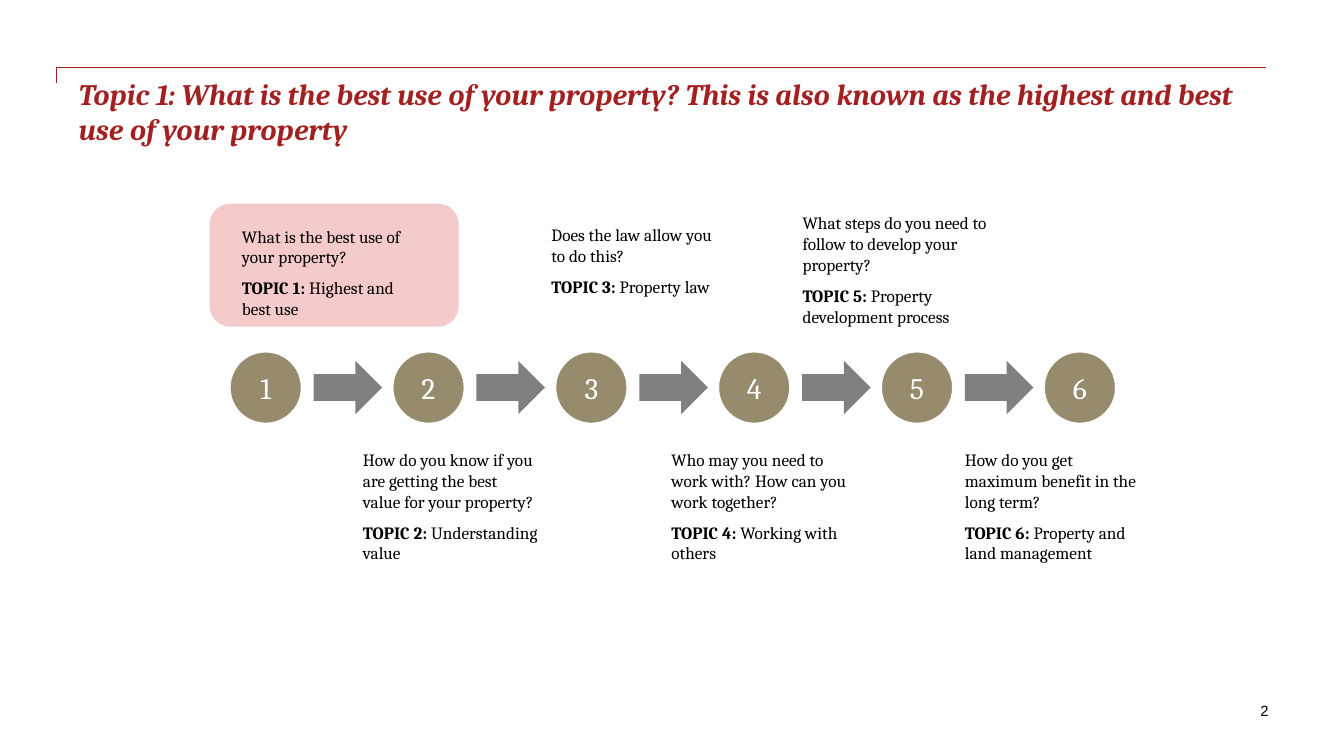
from lxml.etree import SubElement
from pptx import Presentation
from pptx.dml.color import RGBColor
from pptx.enum.shapes import MSO_SHAPE
from pptx.enum.text import MSO_ANCHOR, MSO_AUTO_SIZE, PP_ALIGN
from pptx.oxml.ns import qn
from pptx.util import Inches, Pt

COLORS = {
    "red": "A32020",
    "pink": "EA9696",
    "khaki": "968C6D",
    "gray": "808080",
    "white": "FFFFFF",
    "black": "000000",
}

TOPICS = [
    (2.4, 2.24, 1.74, 1.22, "What is the best use of your property?", "Highest and best use"),
    (3.6, 4.46, 1.74, 1.22, "How do you know if you are getting the best value for your property?",
     "Understanding value"),
    (5.47, 2.23, 1.74, 0.96, "Does the law allow you to do this?", "Property law"),
    (6.66, 4.46, 1.74, 1.22, "Who may you need to work with? How can you work together?",
     "Working with others"),
    (7.96, 2.11, 1.98, 1.22, "What steps do you need to follow to develop your property?",
     "Property development process"),
    (9.57, 4.46, 1.74, 1.22, "How do you get maximum benefit in the long term?",
     "Property and land management"),
]


def rgb(name):
    return RGBColor.from_string(COLORS[name])


def add_run(p, text, size=12.3, font="Cambria", color="black", bold=False, italic=False):
    r = p.add_run()
    r.text = text
    r.font.size = Pt(size)
    r.font.name = font
    r.font.color.rgb = rgb(color)
    r.font.bold = bold
    r.font.italic = italic


class Deck:
    """Holds the slide style and draws each kind of element."""

    def __init__(self, prs):
        self.s = prs.slides.add_slide(prs.slide_layouts[5])

    def frame(self, tf, inset=0.0, anchor=MSO_ANCHOR.TOP):
        tf.word_wrap = True
        tf.auto_size = MSO_AUTO_SIZE.NONE
        tf.vertical_anchor = anchor
        tf.margin_left = tf.margin_right = Inches(inset)
        tf.margin_top = tf.margin_bottom = Inches(inset / 2)
        return tf

    def title(self, text, x, y, w, h):
        sp = self.s.shapes.title
        sp.left, sp.top, sp.width, sp.height = map(Inches, (x, y, w, h))
        p = self.frame(sp.text_frame).paragraphs[0]
        p.alignment = PP_ALIGN.LEFT
        add_run(p, text, size=21.2, color="red", bold=True, italic=True)

    def bracket(self, points):
        start, *rest = [(Inches(x), Inches(y)) for x, y in points]
        builder = self.s.shapes.build_freeform(*start)
        builder.add_line_segments(rest, close=False)
        sp = builder.convert_to_shape()
        sp.shadow.inherit = False
        sp.fill.background()
        sp.line.color.rgb = rgb("red")
        sp.line.width = Pt(1)

    def shape(self, kind, x, y, w, h, fill, alpha=None, outline=False):
        sp = self.s.shapes.add_shape(kind, Inches(x), Inches(y), Inches(w), Inches(h))
        sp.shadow.inherit = False
        sp.fill.solid()
        sp.fill.fore_color.rgb = rgb(fill)
        if alpha:
            clr = sp._element.spPr.find(qn("a:solidFill")).find(qn("a:srgbClr"))
            SubElement(clr, qn("a:alpha"), val=str(alpha * 1000))
        if outline:
            sp.line.color.rgb = rgb(fill)
            sp.line.width = Pt(0.25)
        else:
            sp.line.fill.background()
        return sp

    def step(self, number, x, y, size):
        sp = self.shape(MSO_SHAPE.OVAL, x, y, size, size, "khaki", outline=True)
        p = self.frame(sp.text_frame, 0.1, MSO_ANCHOR.MIDDLE).paragraphs[0]
        p.alignment = PP_ALIGN.CENTER
        add_run(p, str(number), size=21.2, color="white")

    def textbox(self, x, y, w, h, inset=0.0, anchor=MSO_ANCHOR.TOP):
        sp = self.s.shapes.add_textbox(Inches(x), Inches(y), Inches(w), Inches(h))
        return self.frame(sp.text_frame, inset, anchor)

    def topic(self, number, x, y, w, h, question, name):
        tf = self.textbox(x, y, w, h)
        p = tf.paragraphs[0]
        p.space_after = Pt(7.5)
        add_run(p, question)
        p = tf.add_paragraph()
        p.space_after = Pt(7.5)
        add_run(p, f"TOPIC {number}: ", bold=True)
        add_run(p, name)

    def page_number(self, number, x, y, w, h):
        p = self.textbox(x, y, w, h, 0.1, MSO_ANCHOR.MIDDLE).paragraphs[0]
        p.alignment = PP_ALIGN.RIGHT
        add_run(p, str(number), size=10.6, font="Arial")


def main():
    prs = Presentation()
    prs.slide_width, prs.slide_height = Inches(13.33), Inches(7.5)
    deck = Deck(prs)
    deck.bracket([(0.56, 0.82), (0.56, 0.67), (12.56, 0.67)])
    deck.title("Topic 1: What is the best use of your property? "
               "This is also known as the highest and best use of your property",
               0.78, 0.75, 11.78, 1)
    deck.shape(MSO_SHAPE.ROUNDED_RECTANGLE, 2.08, 2.02, 2.47, 1.22, "pink", alpha=50)
    pitch = 9.69 / 6
    for i, topic in enumerate(TOPICS):
        deck.step(i + 1, 2.29 + i * pitch, 3.5, 0.69)
        deck.topic(i + 1, *topic)
        if i < len(TOPICS) - 1:
            deck.shape(MSO_SHAPE.RIGHT_ARROW, 3.11 + i * pitch, 3.58, 0.68, 0.53, "gray")
    deck.page_number(2, 9.04, 6.87, 3.64, 0.35)
    prs.save("out.pptx")


if __name__ == "__main__":
    main()
